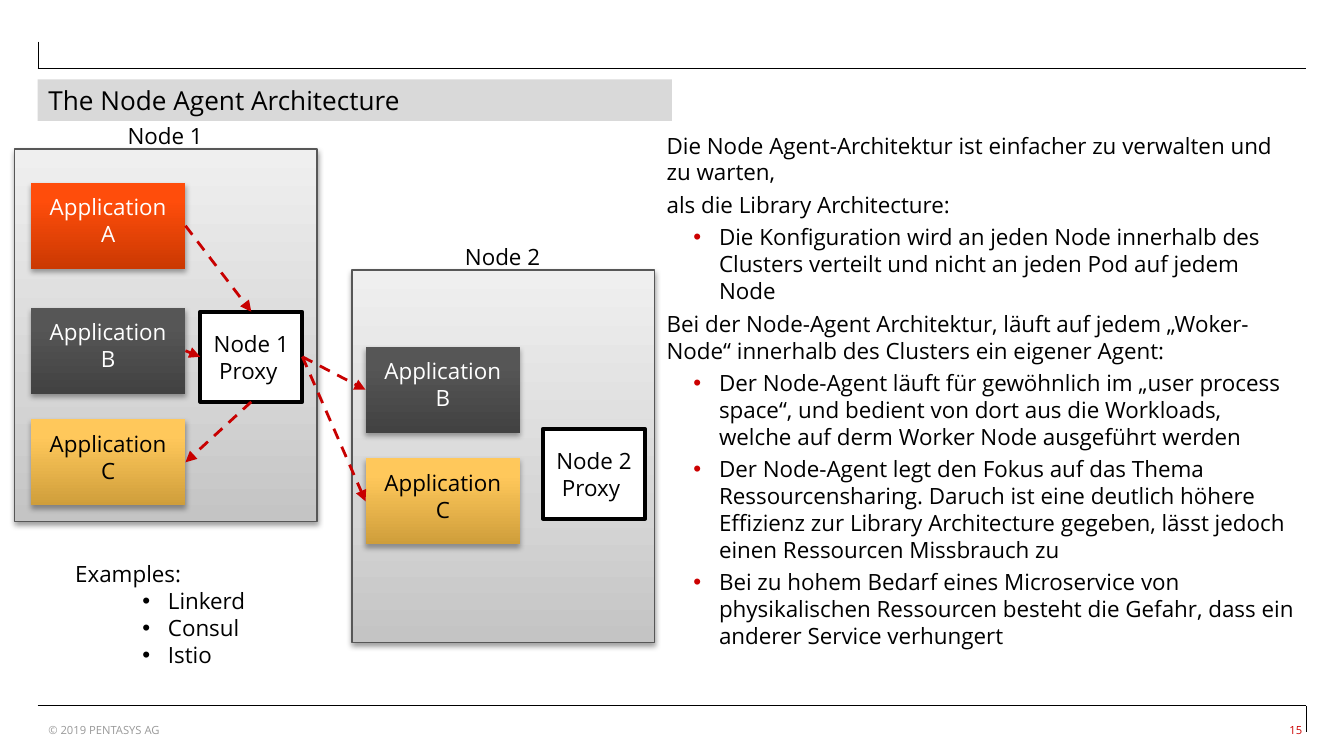
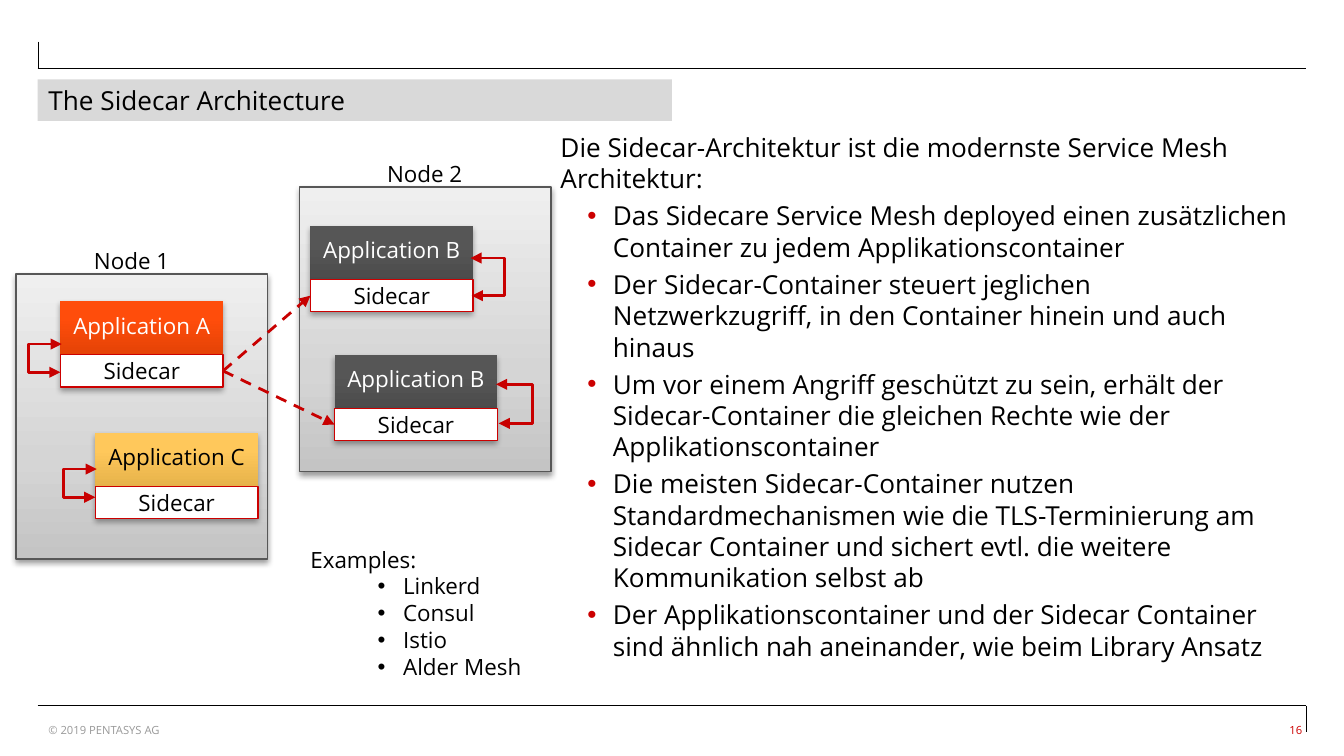
from lxml.etree import SubElement
from pptx import Presentation
from pptx.dml.color import RGBColor
from pptx.enum.dml import MSO_LINE
from pptx.enum.shapes import MSO_CONNECTOR, MSO_SHAPE
from pptx.enum.text import MSO_ANCHOR, MSO_AUTO_SIZE, PP_ALIGN
from pptx.oxml.ns import qn
from pptx.util import Inches, Pt

FONT = "Open Sans"
COLORS = {
    "text": "000000", "light": "FFFFFF", "bar": "D9D9D9", "accent": "CC0000",
    "arrow": "C80000", "muted": "999999", "node_line": "575757",
}
GRADIENTS = {
    "node": [(0, "C4C4C4"), (35, "D5D5D5"), (100, "EFEFEF")],
    "A": [(0, "CB3902"), (80, "FF4D0B"), (100, "FF4E0D")],
    "B": [(0, "424242"), (80, "565656"), (100, "575757")],
    "C": [(0, "CF9E3B"), (80, "FFC85B"), (100, "FFC95D")],
}
TOP, LEFT, BOTTOM, RIGHT = range(4)


def rgb(name):
    """Return the named colour."""
    return RGBColor.from_string(COLORS[name])


def set_all(target, **formats):
    """Set every given attribute on the target."""
    for name, value in formats.items():
        setattr(target, name, value)


def add_xml(parent, tag, **attributes):
    """Append a DrawingML element with its attributes."""
    return SubElement(parent, qn(tag), {key: str(value) for key, value in attributes.items()})


def set_frame(shape, anchor=MSO_ANCHOR.TOP, horizontal=0.08, vertical=0.0, wrap=True):
    """Set anchor, margins and wrapping of a text frame."""
    frame = shape.text_frame
    set_all(frame, auto_size=MSO_AUTO_SIZE.NONE, word_wrap=wrap, vertical_anchor=anchor,
            margin_left=Inches(horizontal), margin_right=Inches(horizontal),
            margin_top=Inches(vertical), margin_bottom=Inches(vertical))
    return frame


def write(paragraph, text, size=12, color="text", align=PP_ALIGN.LEFT):
    """Write one formatted run into a paragraph."""
    paragraph.alignment = align
    run = paragraph.add_run()
    run.text = text
    set_all(run.font, size=Pt(size), name=FONT)
    run.font.color.rgb = rgb(color)


def write_list(frame, items, size, indent, gap=0, bullet_color="text"):
    """Write (level, text) items, with bullets on level 1."""
    for index, (level, text) in enumerate(items):
        paragraph = frame.add_paragraph() if index else frame.paragraphs[0]
        set_all(paragraph, level=level, space_before=Pt(gap if index else 0))
        properties = paragraph._p.get_or_add_pPr()
        properties.set("marL", str(Inches(indent if level else 0)))
        properties.set("indent", str(Inches(-0.19 if level else 0)))
        if level:
            color = add_xml(properties, "a:buClr")
            add_xml(color, "a:srgbClr", val=COLORS[bullet_color])
            add_xml(properties, "a:buFont", typeface="Arial")
            add_xml(properties, "a:buChar", char="•")
        else:
            add_xml(properties, "a:buNone")
        write(paragraph, text, size)


def place(shape, box):
    """Move a shape to a box given in inches."""
    left, top, width, height = map(Inches, box)
    set_all(shape, left=left, top=top, width=width, height=height)


def add_text(slide, box, text, size=12, color="text", align=PP_ALIGN.LEFT, **frame_formats):
    """Add a one-paragraph text box."""
    shape = slide.shapes.add_textbox(*map(Inches, box))
    write(set_frame(shape, **frame_formats).paragraphs[0], text, size, color, align)


def add_box(slide, box, text="", gradient=None, text_color="text", line=None,
            line_width=0.75, shadow=None, anchor=MSO_ANCHOR.MIDDLE):
    """Add a rectangle, white or with gradient and shadow."""
    shape = slide.shapes.add_shape(MSO_SHAPE.RECTANGLE, *map(Inches, box))
    shape.shadow.inherit = False
    shape.fill.solid()
    shape.fill.fore_color.rgb = rgb("light")
    if line:
        shape.line.color.rgb = rgb(line)
        shape.line.width = Pt(line_width)
    else:
        shape.line.fill.background()
    properties = shape._element.spPr
    if gradient:
        solid = properties.find(qn("a:solidFill"))
        fill = add_xml(properties, "a:gradFill", rotWithShape=1)
        properties.replace(solid, fill)
        stops = add_xml(fill, "a:gsLst")
        for position, color in GRADIENTS[gradient]:
            stop = add_xml(stops, "a:gs", pos=position * 1000)
            add_xml(stop, "a:srgbClr", val=color)
        add_xml(fill, "a:lin", ang=270 * 60000, scaled=0)
    if shadow:
        alpha, distance = shadow
        outer = add_xml(properties.find(qn("a:effectLst")), "a:outerShdw", blurRad=Pt(3.1),
                        dist=Pt(distance), dir=90 * 60000, rotWithShape=0)
        color = add_xml(outer, "a:srgbClr", val=COLORS["text"])
        add_xml(color, "a:alpha", val=alpha * 1000)
    if text:
        frame = set_frame(shape, anchor, vertical=0.08)
        write(frame.paragraphs[0], text, 12, text_color, PP_ALIGN.CENTER)
    return shape


def add_line(slide, points, color, width, kind=MSO_CONNECTOR.STRAIGHT):
    """Add a connector without shadow."""
    line = slide.shapes.add_connector(kind, *map(Inches, points))
    line.line.color.rgb = rgb(color)
    line.line.width = Pt(width)
    add_xml(line._element.spPr, "a:effectLst")
    return line


def add_call(slide, source, source_side, target, target_side):
    """Join two boxes with a dashed arrow."""
    arrow = add_line(slide, (0, 0, 1, 1), "arrow", 1.5)
    arrow.begin_connect(source, source_side)
    arrow.end_connect(target, target_side)
    arrow.line.dash_style = MSO_LINE.DASH
    add_xml(arrow.line._get_or_add_ln(), "a:tailEnd", type="triangle")


def add_loop(slide, box, loop):
    """Add a two-headed elbow between an application and its sidecar."""
    left, top = box[:2]
    start_x, start_y, end_x, end_y, turn_x = loop
    points = (left + start_x, top + start_y, left + end_x, top + end_y)
    elbow = add_line(slide, points, "arrow", 1.5, MSO_CONNECTOR.ELBOW)
    bend = round((turn_x - start_x) / (end_x - start_x) * 100000)
    values = elbow._element.spPr.find(qn("a:prstGeom")).get_or_add_avLst()
    add_xml(values, "a:gd", name="adj1", fmla=f"val {bend}")
    for end in ("a:headEnd", "a:tailEnd"):
        add_xml(elbow.line._get_or_add_ln(), end, type="triangle")


def add_application(slide, box, letter):
    """Add an application box."""
    return add_box(slide, box, f"Application {letter}", letter,
                   "text" if letter == "C" else "light", shadow=(35, 1.8), anchor=MSO_ANCHOR.TOP)


def add_node(slide, box, name, label_shift=0):
    """Add a node panel with its name above."""
    left, top, width, _ = box
    add_box(slide, box, gradient="node", line="node_line", shadow=(38, 1.6))
    label = (left + width / 2 - 0.59 + label_shift, top - 0.2, 1.17, 0.2)
    add_text(slide, label, name, align=PP_ALIGN.CENTER, horizontal=0)


def add_proxy_node(slide, box, name, applications, proxy):
    """Add a node with applications and a shared proxy."""
    left, top = box[:2]
    add_node(slide, box, name)
    shapes = [add_application(slide, (left + x, top + y, 1.15, 0.64), letter)
              for letter, x, y in applications]
    proxy_box = (left + proxy[0], top + proxy[1], 0.76, 0.67)
    return shapes, add_box(slide, proxy_box, f"{name} Proxy ", line="text", line_width=2)


def add_sidecar_node(slide, box, name, applications, label_shift=0):
    """Add a node whose applications each have a sidecar."""
    left, top = box[:2]
    add_node(slide, box, name, label_shift)
    sidecars = []
    for letter, x, y, loop in applications:
        app_box = (left + x, top + y, 1.21, 0.64)
        add_application(slide, app_box, letter)
        sidecar_box = (left + x, top + y + 0.4, 1.21, 0.24)
        sidecars.append(add_box(slide, sidecar_box, "Sidecar", line="accent"))
        add_loop(slide, app_box, loop)
    return sidecars


def draw_node_agent(slide, box):
    """Draw two nodes that each share one proxy."""
    left, top = box[:2]
    (app_a, app_b, app_c), proxy = add_proxy_node(
        slide, (left, top, 2.25, 2.77), "Node 1",
        [("A", 0.12, 0.25), ("B", 0.12, 1.18), ("C", 0.12, 2.01)], (1.38, 1.21))
    (remote_b, remote_c), _ = add_proxy_node(
        slide, (left + 2.51, top + 0.9, 2.25, 2.77), "Node 2",
        [("B", 0.1, 0.57), ("C", 0.1, 1.4)], (1.42, 1.18))
    add_call(slide, proxy, RIGHT, remote_b, LEFT)
    add_call(slide, proxy, RIGHT, remote_c, LEFT)
    add_call(slide, app_a, RIGHT, proxy, TOP)
    add_call(slide, app_b, RIGHT, proxy, LEFT)
    add_call(slide, proxy, BOTTOM, app_c, RIGHT)


def draw_sidecar(slide, box):
    """Draw two nodes with a sidecar for each application."""
    left, top = box[:2]
    caller, _ = add_sidecar_node(
        slide, (left, top + 0.65, 1.87, 2.12), "Node 1",
        [("A", 0.33, 0.2, (0.01, 0.32, 0, 0.53, -0.24)),
         ("C", 0.59, 1.18, (0.01, 0.27, 0, 0.48, -0.24))], -0.07)
    targets = add_sidecar_node(
        slide, (left + 2.11, top, 1.87, 2.12), "Node 2",
        [("B", 0.08, 0.29, (1.19, 0.24, 1.2, 0.52, 1.45)),
         ("B", 0.26, 1.25, (1.2, 0.22, 1.22, 0.51, 1.47))])
    for target in targets:
        add_call(slide, caller, RIGHT, target, LEFT)


def draw_examples(slide, box, names):
    """List example products."""
    shape = slide.shapes.add_textbox(*map(Inches, box))
    items = [(0, "Examples:")] + [(1, name) for name in names]
    write_list(set_frame(shape, horizontal=0), items, 12, 0.69)


def draw_frame(slide, title, number):
    """Draw rules, title bar, copyright and page number."""
    for points in ((0.28, 5.25, 9.72, 5.25), (9.72, 5.25, 9.72, 5.45),
                   (0.28, 0.51, 9.72, 0.51), (0.28, 0.31, 0.28, 0.51)):
        add_line(slide, points, "text", 0.1)
    bar = slide.shapes.title
    place(bar, (0.28, 0.59, 4.72, 0.31))
    bar.fill.solid()
    bar.fill.fore_color.rgb = rgb("bar")
    write(set_frame(bar, MSO_ANCHOR.MIDDLE).paragraphs[0], title, 14)
    add_text(slide, (0.28, 5.33, 7.95, 0.2), "© 2019 PENTASYS AG", 6, "muted",
             anchor=MSO_ANCHOR.MIDDLE)
    add_text(slide, (9.42, 5.33, 0.27, 0.2), str(number), 6, "accent", PP_ALIGN.RIGHT,
             anchor=MSO_ANCHOR.MIDDLE, horizontal=0, wrap=False)


def draw_body(slide, box, items, size, anchor):
    """Fill the body placeholder with the explanation."""
    body = slide.placeholders[1]
    place(body, box)
    write_list(set_frame(body, anchor), items, size, 0.39, 3, "accent")


NODE_AGENT_TEXT = [
    (0, "Die Node Agent-Architektur ist einfacher zu verwalten und zu warten,"),
    (0, "als die Library Architecture:"),
    (1, "Die Konfiguration wird an jeden Node innerhalb des Clusters verteilt und nicht an jeden Pod auf jedem Node"),
    (0, "Bei der Node-Agent Architektur, läuft auf jedem „Woker-Node“ innerhalb des Clusters ein eigener Agent:"),
    (1, "Der Node-Agent läuft für gewöhnlich im „user process space“, und bedient von dort aus die Workloads, welche auf derm Worker Node ausgeführt werden"),
    (1, "Der Node-Agent legt den Fokus auf das Thema Ressourcensharing. Daruch ist eine deutlich höhere Effizienz zur Library Architecture gegeben, lässt jedoch einen Ressourcen Missbrauch zu"),
    (1, "Bei zu hohem Bedarf eines Microservice von physikalischen Ressourcen besteht die Gefahr, dass ein anderer Service verhungert"),
]
SIDECAR_TEXT = [
    (0, "Die Sidecar-Architektur ist die modernste Service Mesh Architektur:"),
    (1, "Das Sidecare Service Mesh deployed einen zusätzlichen Container zu jedem Applikationscontainer"),
    (1, "Der Sidecar-Container steuert jeglichen Netzwerkzugriff, in den Container hinein und auch hinaus"),
    (1, "Um vor einem Angriff geschützt zu sein, erhält der Sidecar-Container die gleichen Rechte wie der Applikationscontainer"),
    (1, "Die meisten Sidecar-Container nutzen Standardmechanismen wie die TLS-Terminierung am Sidecar Container und sichert evtl. die weitere Kommunikation selbst ab"),
    (1, "Der Applikationscontainer und der Sidecar Container sind ähnlich nah aneinander, wie beim Library Ansatz"),
]


def main():
    """Build both slides and save them."""
    presentation = Presentation()
    width = Inches(10)
    set_all(presentation, slide_width=width, slide_height=width * 9 // 16)
    layout = presentation.slide_layouts[1]
    meshes = ["Linkerd", "Consul", "Istio"]

    slide = presentation.slides.add_slide(layout)
    draw_frame(slide, "The Node Agent Architecture", 15)
    draw_body(slide, (4.88, 0.98, 4.84, 3.94), NODE_AGENT_TEXT, 12, MSO_ANCHOR.TOP)
    draw_node_agent(slide, (0.11, 1.11, 4.76, 3.67))
    draw_examples(slide, (0.56, 4.17, 1.77, 0.81), meshes)

    slide = presentation.slides.add_slide(layout)
    draw_frame(slide, "The Sidecar Architecture", 16)
    draw_body(slide, (4.09, 0.98, 5.63, 3.94), SIDECAR_TEXT, 14, MSO_ANCHOR.MIDDLE)
    draw_sidecar(slide, (0.12, 1.39, 3.98, 2.77))
    draw_examples(slide, (2.31, 4.06, 1.77, 1.01), meshes + ["Alder Mesh"])

    presentation.save("out.pptx")


if __name__ == "__main__":
    main()
